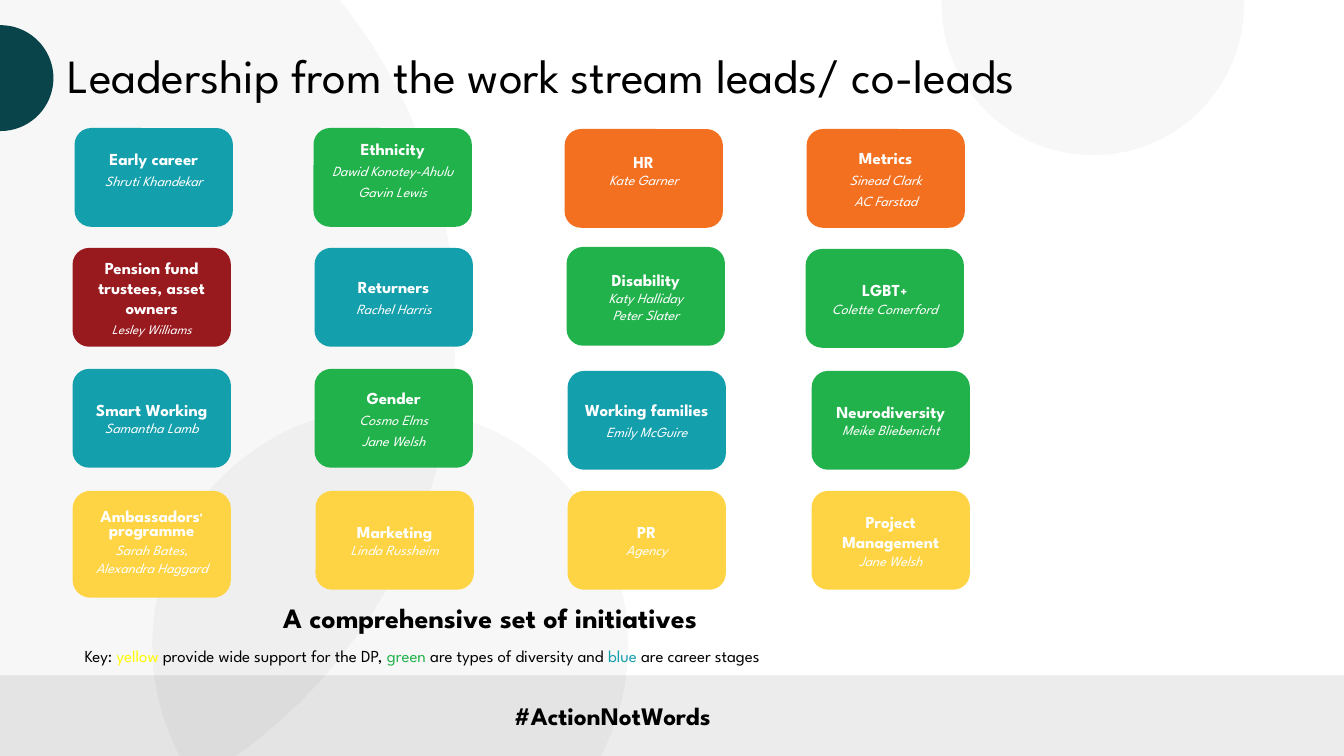
from itertools import groupby

from lxml import etree
from pptx import Presentation, util as u
from pptx.dml.color import RGBColor
from pptx.enum import shapes, text
from pptx.oxml.ns import qn

FONT = "League Spartan"
COLOURS = {
    "black": "000000", "white": "FFFFFF", "band": "ECECEC", "dark": "09444A",
    "blue": "149FAD", "green": "22B24C", "orange": "F37021", "red": "98191E",
    "yellow": "FED445", "bright": "FFFF00",
}
SMALL_MARKS = {"+": 9.4, "’": 9}
CARD_WIDTH, CARD_HEIGHT = 1.57, 0.98
LIFT = 0.16  # extra bottom inset that raises a card's text

# left, top, colour, heading, names, options
CARDS = [
    (0.74, 1.27, "blue", "Early career", ["Shruti Khandekar"], {"gap": 2.8, "lift": LIFT}),
    (3.11, 1.27, "green", "Ethnicity", ["Dawid Konotey-Ahulu", "Gavin Lewis"],
     {"gap": 2.8, "lift": LIFT}),
    (5.6, 1.28, "orange", "HR", ["Kate Garner"], {"lift": LIFT}),
    (8, 1.28, "orange", "Metrics", ["Sinead Clark", "AC Farstad"], {"gap": 2.8}),
    (0.72, 2.46, "red", "Pension fund trustees, asset owners", ["Lesley Williams"],
     {"gap": 2.8, "name_size": 9.4}),
    (3.12, 2.46, "blue", "Returners", ["Rachel Harris"], {"gap": 2.8}),
    (5.62, 2.45, "green", "Disability", ["Katy Halliday", "Peter Slater"], {}),
    (7.99, 2.47, "green", "LGBT+", ["Colette Comerford"], {}),
    (0.72, 3.66, "blue", "Smart Working", ["Samantha Lamb"], {}),
    (3.12, 3.66, "green", "Gender", ["Cosmo Elms", "Jane Welsh"], {"gap": 2.8}),
    (5.63, 3.68, "blue", "Working families", ["Emily McGuire"], {"gap": 2.8}),
    (8.05, 3.68, "green", "Neurodiversity", ["Meike Bliebenicht"], {}),
    (0.72, 4.87, "yellow", "Ambassadors’ programme", ["Sarah Bates,", "Alexandra Haggard"],
     {"gap": 2.9, "height": 1.06, "line": 10}),
    (3.13, 4.87, "yellow", "Marketing", ["Linda Russheim"], {}),
    (5.63, 4.87, "yellow", "PR", ["Agency"], {}),
    (8.05, 4.87, "yellow", "Project Management", ["Jane Welsh"], {}),
]
KEY = [
    ("Key: ", "black"), ("yellow ", "bright"),
    ("provide wide support for the DP, ", "black"), ("green", "green"),
    (" are types of diversity and ", "black"), ("blue", "blue"),
    (" are career stages", "black"),
]


def rgb(name):
    return RGBColor.from_string(COLOURS[name])


def add_filled(page, kind, box, colour, alpha=None):
    shape = page.shapes.add_shape(kind, *map(u.Inches, box))
    shape.shadow.inherit = False
    shape.line.fill.background()
    shape.fill.solid()
    shape.fill.fore_color.rgb = rgb(colour)
    if alpha is not None:
        tint = shape.fill._xPr.find(".//" + qn("a:srgbClr"))
        etree.SubElement(tint, qn("a:alpha")).set("val", str(alpha * 1000))
    return shape


def style(para, size, colour=None, bold=False, italic=False):
    para.font.name = FONT
    para.font.size = u.Pt(size)
    para.font.bold = bold
    para.font.italic = italic
    if colour:
        para.font.color.rgb = rgb(colour)


def add_label(page, box, spans, size, bold=False, wrap=True):
    """Place one line of text made of (wording, colour) spans."""
    label = page.shapes.add_textbox(*map(u.Inches, box))
    frame = label.text_frame
    frame.word_wrap = wrap
    para = frame.paragraphs[0]
    style(para, size, bold=bold)
    for wording, colour in spans:
        span = para.add_run()
        span.text = wording
        span.font.color.rgb = rgb(colour)
    return frame


def add_backdrop(page):
    add_filled(page, shapes.MSO_SHAPE.RECTANGLE, (0, 6.7, 13.33, 0.8), "band")
    for left, top, size in [(-5.89, -1.94, 10.41), (9.34, -1.46, 3), (1.51, 4.04, 4.72)]:
        add_filled(page, shapes.MSO_SHAPE.OVAL, (left, top, size, size), "black", alpha=3)
    add_filled(page, shapes.MSO_SHAPE.OVAL, (-0.52, 0.25, 1.05, 1.05), "dark")


def add_title(page, box):
    wording = "Leadership from the work stream leads/ co-leads"
    frame = add_label(page, box, [(wording, "black")], 34)
    frame.margin_left = frame.margin_right = frame.margin_top = frame.margin_bottom = 0
    frame.vertical_anchor = text.MSO_ANCHOR.MIDDLE
    frame.paragraphs[0].line_spacing = 0.9


def add_card(page, left, top, colour, heading, names, gap=0, lift=0,
             height=CARD_HEIGHT, name_size=10, line=None):
    box = (left, top, CARD_WIDTH, height)
    card = add_filled(page, shapes.MSO_SHAPE.ROUNDED_RECTANGLE, box, colour)
    frame = card.text_frame
    frame.word_wrap = True
    frame.vertical_anchor = text.MSO_ANCHOR.MIDDLE
    frame.margin_bottom = u.Inches(0.05 + lift)

    # Heading, with its marks set smaller
    para = frame.paragraphs[0]
    style(para, 12, "white", bold=True)
    for size, letters in groupby(heading, SMALL_MARKS.get):
        span = para.add_run()
        span.text = "".join(letters)
        if size:
            span.font.size = u.Pt(size)

    # Names of the leads
    for name in names:
        para = frame.add_paragraph()
        para.text = name
        para.space_before = u.Pt(gap)
        style(para, name_size, "white", italic=True)

    for para in frame.paragraphs:
        para.alignment = text.PP_ALIGN.CENTER
        if line:
            para.line_spacing = u.Pt(line)


def add_captions(page):
    add_label(page, (2.71, 5.91, 4.86, 0.44),
              [("A comprehensive set of initiatives", "black")], 20, bold=True)
    add_label(page, (0.74, 6.36, 8.27, 0.3), KEY, 12, wrap=False)
    add_label(page, (5, 6.9, 3.62, 0.4), [("#ActionNotWords", "black")], 18, bold=True)


def main():
    deck = Presentation()
    deck.slide_width, deck.slide_height = u.Inches(13.33), u.Inches(7.5)
    page = deck.slides.add_slide(deck.slide_layouts[6])
    add_backdrop(page)
    add_title(page, (0.67, 0.11, 12, 1.32))
    for *content, options in CARDS:
        add_card(page, *content, **options)
    add_captions(page)
    deck.save("out.pptx")


if __name__ == "__main__":
    main()
